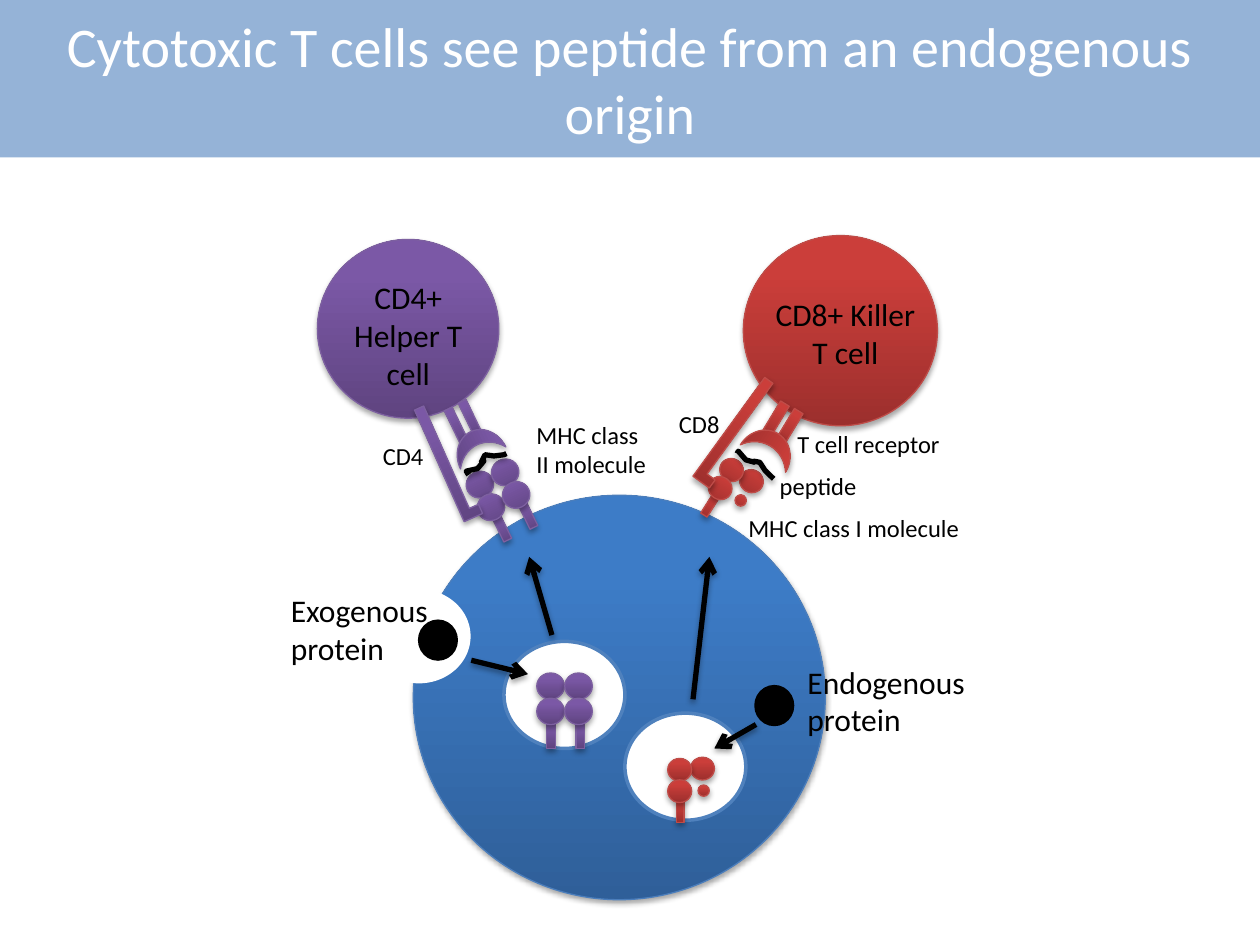
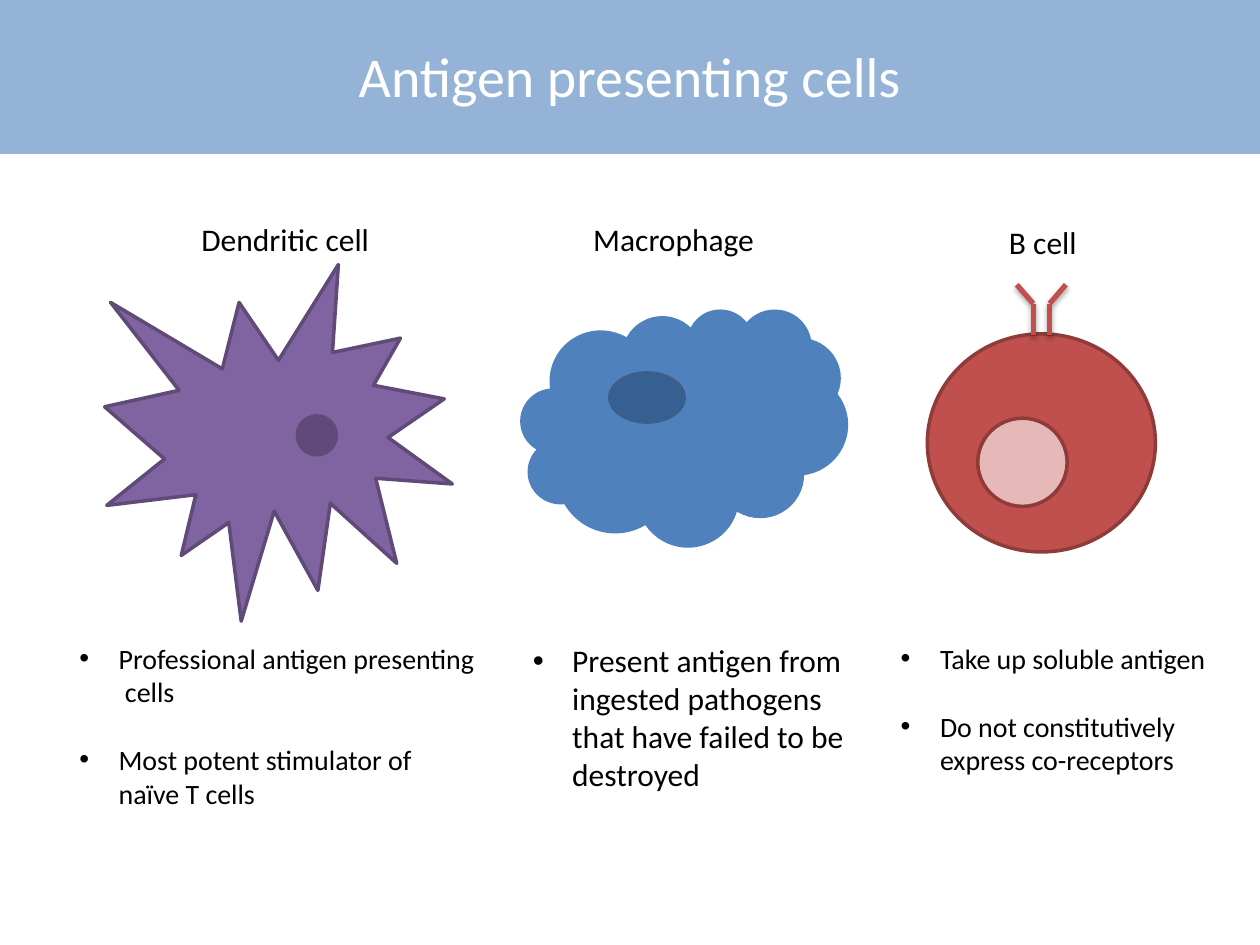
"""Build two slides on antigen presentation to T cells."""
from math import cos, radians, sin

from lxml.etree import SubElement
from pptx import Presentation
from pptx.dml.color import RGBColor
from pptx.enum.shapes import MSO_CONNECTOR, MSO_SHAPE
from pptx.enum.text import MSO_ANCHOR, PP_ALIGN
from pptx.oxml.ns import qn
from pptx.util import Pt

FONT = "Calibri"
BLACK = RGBColor(0x00, 0x00, 0x00)
WHITE = RGBColor(0xFF, 0xFF, 0xFF)
BAND = RGBColor(0x95, 0xB3, 0xD7)
BLUE = RGBColor(0x4F, 0x81, 0xBD)
NAVY = RGBColor(0x37, 0x60, 0x92)
NAVY_LINE = RGBColor(0x3A, 0x5F, 0x8C)
PURPLE = RGBColor(0x80, 0x64, 0xA2)
PLUM = RGBColor(0x60, 0x4A, 0x7B)
PLUM_LINE = RGBColor(0x5F, 0x4A, 0x78)
RED = RGBColor(0xC0, 0x50, 0x4D)
RED_LINE = RGBColor(0x8E, 0x3B, 0x39)
PINK = RGBColor(0xE6, 0xB9, 0xB8)

GLOSS_BLUE = (RGBColor(0x2F, 0x5F, 0x99), RGBColor(0x3D, 0x7C, 0xC7), RGBColor(0x4B, 0x7E, 0xBC))
GLOSS_PURPLE = (RGBColor(0x5F, 0x44, 0x80), RGBColor(0x7B, 0x58, 0xA6), RGBColor(0x7D, 0x60, 0xA0))
GLOSS_RED = (RGBColor(0x9C, 0x2F, 0x2D), RGBColor(0xCB, 0x3E, 0x3A), RGBColor(0xBF, 0x4C, 0x48))

OVAL, RECT, MOON = MSO_SHAPE.OVAL, MSO_SHAPE.RECTANGLE, MSO_SHAPE.MOON
CORNER = MSO_SHAPE.from_xml("corner")
LEFT, CENTER = PP_ALIGN.LEFT, PP_ALIGN.CENTER

TITLES = ["Cytotoxic T cells see peptide from an endogenous origin", "Antigen presenting cells"]
TITLE_TOPS = [0, -2]

CELLS = [
    ((236.2, 283, 235.4, 231.1), GLOSS_BLUE),
    ((181.4, 136.8, 103.7, 102.2), GLOSS_PURPLE),
    ((424.8, 134.6, 110.9, 108.7), GLOSS_RED),
]
VESICLES = [(288, 366.5, 69.1, 61.2), (357.1, 407.5, 69.1, 61.2)]

MHC_I = [
    (OVAL, 6.5, -12.2, 13.7, 13), (OVAL, -6.5, -11.5, 13.7, 13),
    (RECT, -6.1, 12.2, 4.3, 13), (OVAL, -6.5, 0.7, 13.7, 13),
    (OVAL, 7.2, 0.4, 6.5, 6.5),
]
MHC_II = [
    (kind, dx, dy, w, h)
    for bead_x, stem_x in ((-8, -7.6), (8, 9))
    for kind, dx, dy, w, h in (
        (OVAL, bead_x, -14, 15.8, 15.1), (RECT, stem_x, 14, 5, 15.1), (OVAL, bead_x, 0.4, 15.8, 15.1))
]
MOLECULES = [
    (MHC_I, (394.9, 451.4), 0, GLOSS_RED),
    (MHC_II, (322.6, 406.1), 0, GLOSS_PURPLE),
    (MHC_II, (287.6, 286), -26, GLOSS_PURPLE),
    (MHC_I, (417.4, 281.8), 32.3, GLOSS_RED),
]
PEPTIDES = [
    [(267.8, 271.4), (266.4, 269.3), (272.9, 267.8), (276.5, 263.5), (275, 264.2),
     (277.2, 259.9), (282.2, 260.6), (288, 259.9), (289.4, 259.2)],
    [(421.2, 259.2), (421.9, 257.8), (426.2, 262.8), (431.3, 264.2), (430.6, 263.5),
     (434.2, 264.2), (437, 268.6), (440.6, 272.2), (442.1, 273.6)],
]
RECEPTORS = [
    (RECT, (258.5, 232.6, 5, 22.3), -25.8, GLOSS_PURPLE),
    (RECT, (266.4, 228.2, 5, 22.3), -25.8, GLOSS_PURPLE),
    (MOON, (264.2, 239.8, 16.6, 28.8), 64.2, GLOSS_PURPLE),
    (RECT, (439.9, 229, 5.8, 22.3), 31.2, GLOSS_RED),
    (RECT, (447.8, 233.3, 5.8, 22.3), 31.2, GLOSS_RED),
    (MOON, (432, 239.8, 16.6, 30.2), 121.2, GLOSS_RED),
    (CORNER, (250.6, 229, 11.5, 69.8), -24, GLOSS_PURPLE),
    (CORNER, (415.4, 212.4, 11.5, 69.8), 36, GLOSS_RED),
]
ARROWS = [
    (269.3, 377.3, 301.7, 385.2), (315.4, 362.9, 302.4, 318.2),
    (432, 414, 408.2, 427.7), (396, 399.6, 405.4, 318.2),
]
POCKET = (211, 337.7, 56.9, 51.8)
PROTEINS = [(432, 392.4, 20.9, 21.6), (239.8, 355, 20.9, 21.6)]
LABELS = [
    ("CD8+ Killer T cell", (432, 164.9, 102.2, 51), 18, CENTER),
    ("Exogenous protein", (159.1, 334.1, 96.5, 51), 18, LEFT),
    ("Endogenous protein", (454.3, 375.1, 116.6, 51), 18, LEFT),
    ("CD4+ Helper T cell", (193, 155.5, 80.6, 72.7), 18, CENTER),
    ("T cell receptor", (448.6, 241.9, 133.9, 24.5), 14, LEFT),
    ("MHC class I molecule", (420.5, 289.4, 157.7, 24.5), 14, LEFT),
    ("CD4", (211.7, 248.4, 64.8, 24.5), 14, LEFT),
    ("CD8", (380.9, 230.4, 40.3, 24.5), 14, LEFT),
    ("MHC class II molecule", (299.5, 236.2, 77, 41), 14, LEFT),
    ("peptide", (438.5, 265.7, 88.6, 24.5), 14, LEFT),
]

CELL_TYPES = [
    ("Dendritic cell", (108, 122.4, 124.6, 28.8), (38.2, 362.9, 241.2, 104.4), 16,
     ["Professional antigen presenting\v cells", "Most potent stimulator of naïve T cells"]),
    ("Macrophage", (331.9, 122.4, 136.1, 28.8), (297.4, 362.9, 198.7, 94.3), 18,
     ["Present antigen from ingested pathogens that have failed to be destroyed"]),
    ("B cell", (569.5, 123.8, 141.8, 28.8), (507.6, 362.9, 203.8, 85), 16,
     ["Take up soluble antigen", "Do not constitutively express co-receptors"]),
]
CELL_SHAPES = [
    (MSO_SHAPE.EXPLOSION1, (59.8, 151.2, 198.7, 203.8), PURPLE, PLUM_LINE),
    (MSO_SHAPE.CLOUD, (297.4, 176.4, 187.2, 136.1), BLUE, None),
    (OVAL, (348.5, 213.1, 42.5, 28.1), NAVY, NAVY_LINE),
    (OVAL, (169.9, 237.6, 22.3, 22.3), PLUM, PLUM_LINE),
    (OVAL, (529.9, 190.8, 130.3, 124.6), RED, RED_LINE),
    (OVAL, (558.7, 239, 51.1, 50.4), PINK, RED_LINE),
]
ANTIBODY = [
    (581, 162.7, 590.4, 173.5), (599.8, 173.5, 609.1, 162.7),
    (590.4, 173.5, 590.4, 191.5), (599.8, 173.5, 599.8, 191.5),
]


def assign(obj, **values):
    for name, value in values.items():
        setattr(obj, name, value)


def set_line(line, color, width):
    line.fill.solid()
    line.color.rgb = color
    line.width = Pt(width)


def add_shadow(sp):
    pr = sp._element.spPr
    effects = pr.find(qn("a:effectLst"))
    if effects is None:
        effects = SubElement(pr, qn("a:effectLst"))
    shadow = SubElement(effects, qn("a:outerShdw"), blurRad="40000", dist="23000",
                        dir="5400000", rotWithShape="0")
    color = SubElement(shadow, qn("a:srgbClr"), val="000000")
    SubElement(color, qn("a:alpha"), val="35000")


def add_flat(s, kind, box, fill, line=None):
    sp = s.shapes.add_shape(kind, *map(Pt, box))
    sp.shadow.inherit = False
    sp.fill.solid()
    sp.fill.fore_color.rgb = fill
    if line is None:
        sp.line.fill.background()
    else:
        set_line(sp.line, line, 2)
    return sp


def add_glossy(s, kind, box, gloss, rotation=0):
    dark, light, edge = gloss
    sp = s.shapes.add_shape(kind, *map(Pt, box))
    sp.shadow.inherit = False
    sp.rotation = rotation
    sp.fill.gradient()
    sp.fill.gradient_angle = 90
    for stop, position, color in zip(sp.fill.gradient_stops, (0, 0.8), (dark, light)):
        stop.position = position
        stop.color.rgb = color
    set_line(sp.line, edge, 0.75)
    add_shadow(sp)


def add_molecule(s, parts, center, rotation, gloss):
    c, n = cos(radians(rotation)), sin(radians(rotation))
    for kind, dx, dy, w, h in parts:
        x = center[0] + dx * c - dy * n
        y = center[1] + dx * n + dy * c
        add_glossy(s, kind, (x - w / 2, y - h / 2, w, h), gloss, rotation)


def add_peptide(s, points):
    start, *rest = [(Pt(x), Pt(y)) for x, y in points]
    builder = s.shapes.build_freeform(*start)
    builder.add_line_segments(rest, close=False)
    sp = builder.convert_to_shape()
    sp.shadow.inherit = False
    sp.fill.background()
    set_line(sp.line, BLACK, 3)
    add_shadow(sp)


def add_stroke(s, ends, color, arrow=False):
    cx = s.shapes.add_connector(MSO_CONNECTOR.STRAIGHT, *map(Pt, ends))
    set_line(cx.line, color, 3)
    if arrow:
        ln = cx._element.spPr.find(qn("a:ln"))
        SubElement(ln, qn("a:tailEnd"), type="arrow")
    add_shadow(cx)


def write(p, text, size, color=BLACK, align=LEFT):
    p.text = text
    p.alignment = align
    for r in p.runs:
        assign(r.font, name=FONT, size=Pt(size))
        r.font.color.rgb = color


def add_text(s, text, box, size, align=LEFT):
    tf = s.shapes.add_textbox(*map(Pt, box)).text_frame
    tf.word_wrap = True
    write(tf.paragraphs[0], text, size, align=align)


def add_bullets(s, items, box, size):
    tf = s.shapes.add_textbox(*map(Pt, box)).text_frame
    tf.word_wrap = True
    for i, item in enumerate(items):
        p = tf.add_paragraph() if i else tf.paragraphs[0]
        write(p, item, size)
        if i:
            p.space_before = Pt(size * 1.22)
        pr = p._p.get_or_add_pPr()
        pr.set("marL", str(Pt(22.5)))
        pr.set("indent", str(-Pt(22.5)))
        SubElement(pr, qn("a:buFont"), typeface="Arial")
        SubElement(pr, qn("a:buChar"), char="•")


def add_title(s, text, top):
    tf = add_flat(s, RECT, (0, top, 720, 90), BAND).text_frame
    assign(tf, word_wrap=True, vertical_anchor=MSO_ANCHOR.MIDDLE)
    write(tf.paragraphs[0], text, 32, WHITE, CENTER)


def draw_t_cells(s):
    for box, gloss in CELLS:
        add_glossy(s, OVAL, box, gloss)
    for box in VESICLES:
        add_flat(s, OVAL, box, WHITE, BLUE)
    for molecule in MOLECULES:
        add_molecule(s, *molecule)
    for points in PEPTIDES:
        add_peptide(s, points)
    for kind, box, rotation, gloss in RECEPTORS:
        add_glossy(s, kind, box, gloss, rotation)
    for ends in ARROWS:
        add_stroke(s, ends, BLACK, arrow=True)
    add_flat(s, OVAL, POCKET, WHITE, WHITE)
    for box in PROTEINS:
        add_flat(s, OVAL, box, BLACK, BLACK)
    for label in LABELS:
        add_text(s, *label)


def draw_presenting_cells(s):
    for cell in CELL_SHAPES:
        add_flat(s, *cell)
    for ends in ANTIBODY:
        add_stroke(s, ends, RED)
    for name, name_box, notes_box, size, notes in CELL_TYPES:
        add_text(s, name, name_box, 18)
        add_bullets(s, notes, notes_box, size)


def main():
    prs = Presentation()
    assign(prs, slide_width=Pt(720), slide_height=Pt(540))
    for title, top, draw in zip(TITLES, TITLE_TOPS, (draw_t_cells, draw_presenting_cells)):
        s = prs.slides.add_slide(prs.slide_layouts[6])
        add_title(s, title, top)
        draw(s)
    prs.save("out.pptx")


if __name__ == "__main__":
    main()
